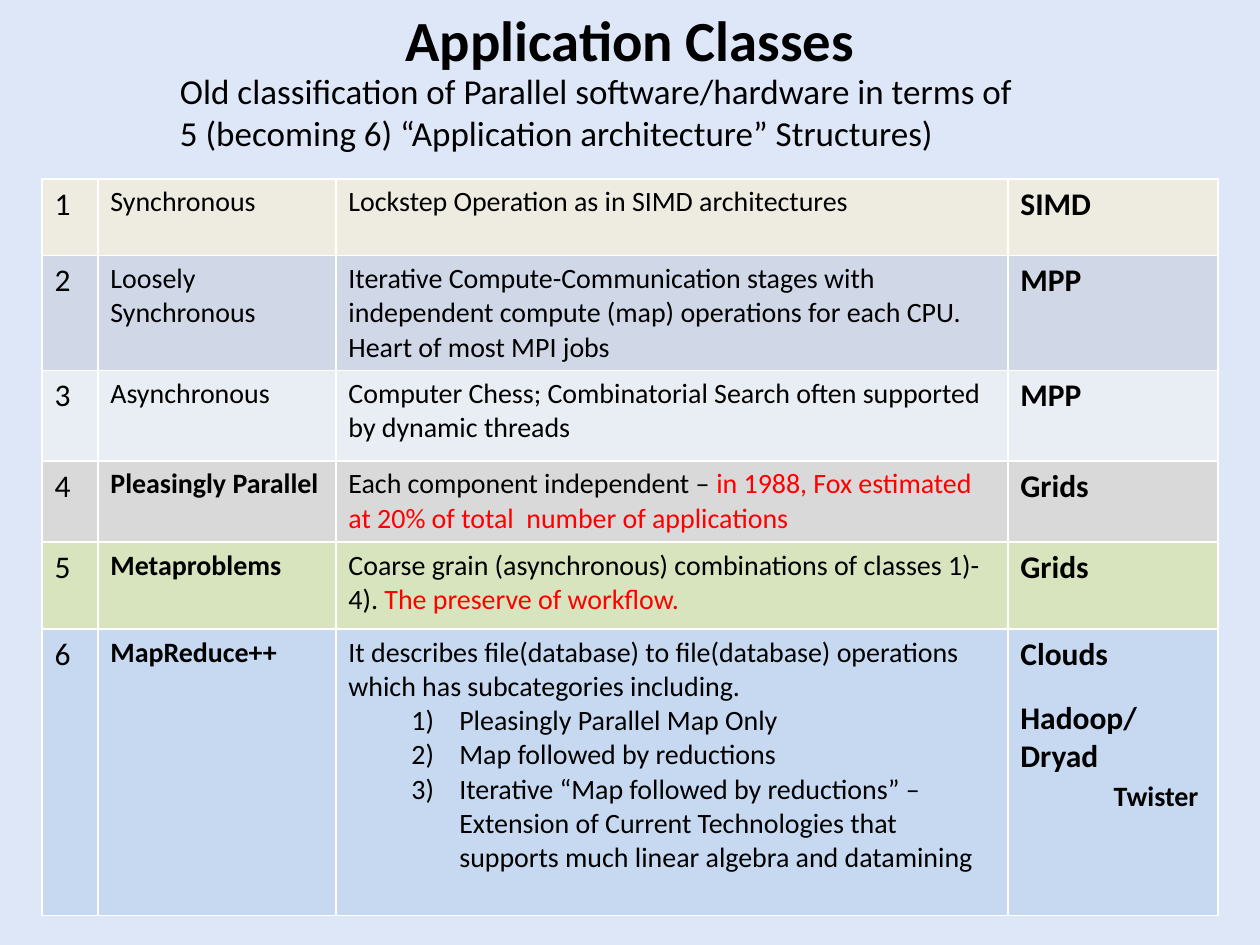
from lxml.etree import SubElement
from pptx import Presentation
from pptx.dml.color import RGBColor
from pptx.enum.text import MSO_ANCHOR, PP_ALIGN
from pptx.oxml.ns import qn
from pptx.util import Emu, Inches, Pt

COLORS = {
    "background": "DEE7F8", "text": "000000", "accent": "FF0000", "border": "FFFFFF",
    "cream": "EEECE1", "slate": "D0D8E8", "mist": "E9EDF4",
    "gray": "D9D9D9", "green": "D7E4BD", "blue": "C6D9F1",
}

# Shares of the slide, in percent
COLUMN_WIDTHS = [4.44, 18.89, 53.33, 16.67]
ROW_HEIGHTS = [8.13, 12.13, 9.6, 8.6, 9.2, 30.3]

# Fill, class name, bold name, description (plain, highlighted), platform
CLASSES = [
    ("cream", "Synchronous", False,
     ("Lockstep Operation as in SIMD architectures", ""), "SIMD"),
    ("slate", "Loosely Synchronous", False,
     ("Iterative Compute-Communication stages with independent compute (map) "
      "operations for each CPU. Heart of most MPI jobs", ""), "MPP"),
    ("mist", "Asynchronous", False,
     ("Computer Chess; Combinatorial Search often supported by dynamic threads", ""), "MPP"),
    ("gray", "Pleasingly Parallel", True,
     ("Each component independent – ",
      "in 1988, Fox estimated at 20% of total  number of applications"), "Grids"),
    ("green", "Metaproblems", True,
     ("Coarse grain (asynchronous) combinations of classes 1)-4). ",
      "The preserve of workflow."), "Grids"),
    ("blue", "MapReduce++", True,
     ("It describes file(database) to file(database) operations which has "
      "subcategories including.", ""), "Clouds"),
]
SUBCATEGORIES = [
    "Pleasingly Parallel Map Only",
    "Map followed by reductions",
    "Iterative “Map followed by reductions” – Extension of Current Technologies "
    "that supports much linear algebra and datamining",
]


def rgb(color):
    return RGBColor.from_string(COLORS[color])


def add_text(paragraph, text, size=16, bold=False, color="text", font="Calibri"):
    """Append text to a paragraph; a newline becomes a line break."""
    for index, line in enumerate(text.split("\n")):
        if index:
            paragraph.add_line_break()
        run = paragraph.add_run()
        run.text = line
        run.font.name, run.font.size, run.font.bold = font, Pt(size), bold
        run.font.color.rgb = rgb(color)


def set_indent(paragraph, left, first=0, numbered=False):
    properties = paragraph._p.get_or_add_pPr()
    properties.set("marL", str(Inches(left)))
    properties.set("indent", str(Inches(first)))
    if numbered:
        SubElement(properties, qn("a:buAutoNum"), type="arabicParenR")


class ClassesSlide:
    def __init__(self, presentation):
        self.width = presentation.slide_width
        self.height = presentation.slide_height
        self.slide = presentation.slides.add_slide(presentation.slide_layouts[6])
        background = self.slide.background.fill
        background.solid()
        background.fore_color.rgb = rgb("background")

    def across(self, percent):
        return Emu(round(self.width * percent / 100))

    def down(self, percent):
        return Emu(round(self.height * percent / 100))

    def text_box(self, left, top, width, height, lines, wrap=True, align=None, **style):
        box = self.slide.shapes.add_textbox(
            self.across(left), self.down(top), self.across(width), self.down(height))
        frame = box.text_frame
        frame.word_wrap = wrap
        for index, line in enumerate(lines):
            paragraph = frame.add_paragraph() if index else frame.paragraphs[0]
            paragraph.alignment = align
            add_text(paragraph, line, **style)
        return frame

    def table(self, left, top, widths, heights):
        table = self.slide.shapes.add_table(
            len(heights), len(widths), self.across(left), self.down(top),
            self.across(sum(widths)), self.down(sum(heights))).table
        table.first_row = table.horz_banding = False
        for column, width in zip(table.columns, widths):
            column.width = self.across(width)
        for row, height in zip(table.rows, heights):
            row.height = self.down(height)
        return table

    def style_cell(self, cell, fill):
        properties = cell._tc.get_or_add_tcPr()
        for side in ("lnL", "lnR", "lnT", "lnB"):
            line = SubElement(properties, qn(f"a:{side}"), w=str(Pt(1)))
            solid = SubElement(line, qn("a:solidFill"))
            SubElement(solid, qn("a:srgbClr"), val=COLORS["border"])
        cell.fill.solid()
        cell.fill.fore_color.rgb = rgb(fill)


def main():
    presentation = Presentation()
    presentation.slide_width, presentation.slide_height = Inches(10), Inches(7.5)
    page = ClassesSlide(presentation)

    # Heading, raised by a deep bottom margin
    heading = page.text_box(0, 2.27, 100, 11.07, ["Application Classes"],
                            align=PP_ALIGN.CENTER, size=32.4, bold=True)
    heading.vertical_anchor = MSO_ANCHOR.MIDDLE
    heading.margin_bottom = Inches(0.6)

    # Table of classes
    table = page.table(3.33, 18.93, COLUMN_WIDTHS, ROW_HEIGHTS)
    for index, (fill, name, bold, (plain, highlight), platform) in enumerate(CLASSES):
        cells = table.rows[index].cells
        for cell in cells:
            page.style_cell(cell, fill)
        number_p, name_p, description_p, platform_p = (
            cell.text_frame.paragraphs[0] for cell in cells)
        add_text(number_p, str(index + 1), size=18)
        add_text(name_p, name, bold=bold)
        add_text(description_p, plain)
        if highlight:
            add_text(description_p, highlight, color="accent")
        add_text(platform_p, platform, size=18, bold=True)

    # Subcategories and platforms of the last class
    description, platforms = (table.cell(5, column).text_frame for column in (2, 3))
    for subcategory in SUBCATEGORIES:
        paragraph = description.add_paragraph()
        paragraph.level = 1
        set_indent(paragraph, 0.88, -0.38, numbered=True)
        add_text(paragraph, subcategory)
    frameworks = platforms.add_paragraph()
    frameworks.space_before = Pt(14.6)
    add_text(frameworks, "Hadoop/\nDryad", size=18, bold=True)
    iterative = platforms.add_paragraph()
    iterative.space_before = Pt(2)
    set_indent(iterative, 0.74)
    add_text(iterative, "Twister", bold=True)

    # Subtitle
    page.text_box(13.3, 6.67, 69.5, 10.27, [
        "Old classification of Parallel software/hardware in terms of",
        "5 (becoming 6) “Application architecture” Structures)",
    ], wrap=False, size=20)

    presentation.save("out.pptx")


if __name__ == "__main__":
    main()
